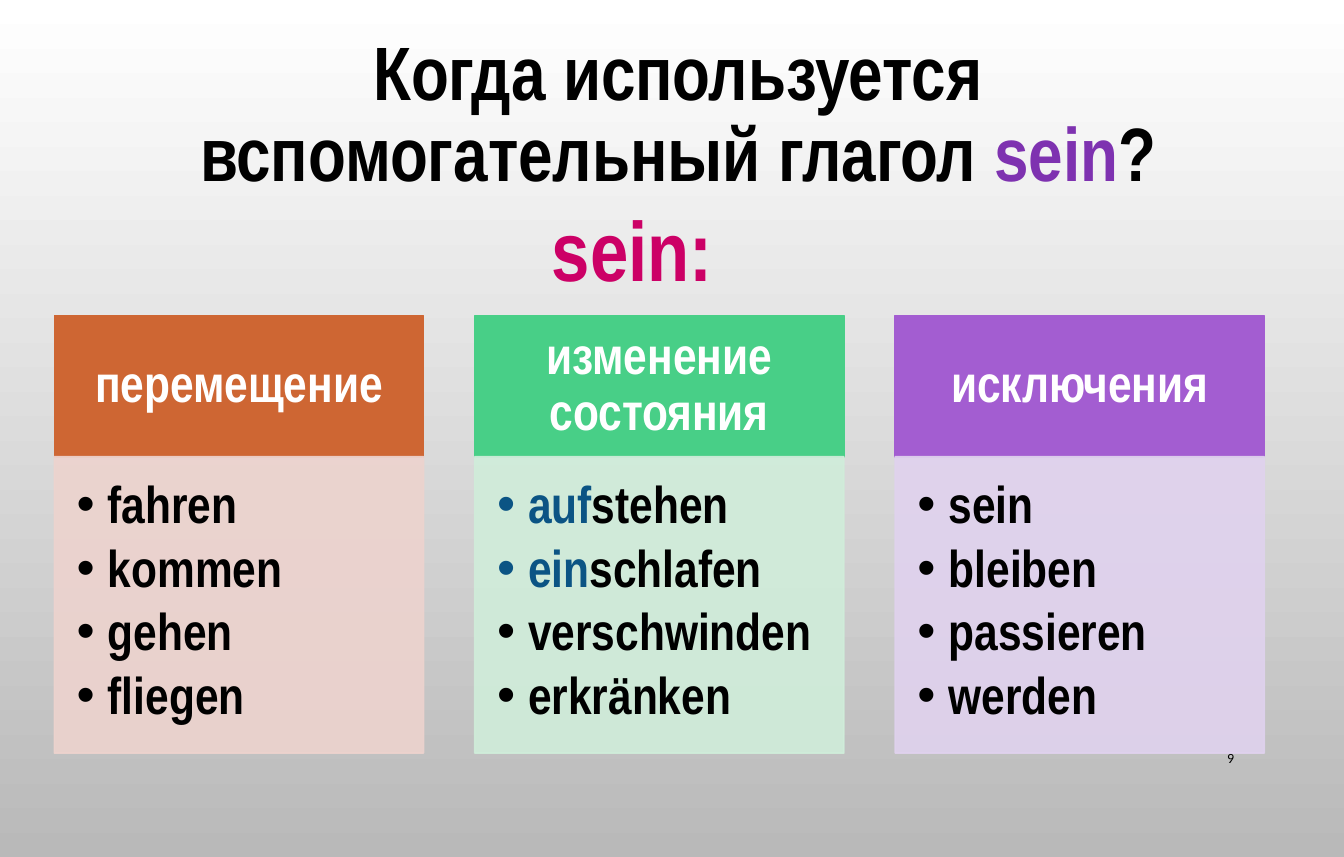
"""Build a slide on German verbs that form the perfect tense with sein."""
from lxml import etree
from pptx import Presentation, util as u
from pptx.dml.color import RGBColor
from pptx.enum import shapes, text
from pptx.oxml.ns import qn


def rgb(value):
    return RGBColor.from_string(value)


def add_run(p, words, size, color="000000", font="Arial Narrow", bold=True):
    r = p.add_run()
    r.text = words
    r.font.size, r.font.name, r.font.bold = u.Pt(size), font, bold
    r.font.color.rgb = rgb(color)


prs = Presentation()
prs.slide_width, prs.slide_height = u.Inches(13.33), u.Inches(8.5)
s = prs.slides.add_slide(prs.slide_layouts[5])

bg = s.background.fill
bg.gradient()
bg.gradient_angle = 270
for stop, color in zip(bg.gradient_stops, ("FFFFFF", "B9B9B9")):
    stop.color.rgb = rgb(color)

title = s.shapes.title
title.left, title.top = u.Inches(1.78), u.Inches(0.56)
title.width, title.height = u.Inches(9.89), u.Inches(1.19)
tf = title.text_frame
tf.word_wrap, tf.auto_size = True, text.MSO_AUTO_SIZE.NONE
tf.vertical_anchor = text.MSO_ANCHOR.MIDDLE
p = tf.paragraphs[0]
p.alignment, p.line_spacing = text.PP_ALIGN.CENTER, 0.9
add_run(p, "Когда используется вспомогательный глагол ", 54)
add_run(p, "sein", 54, "7E32B0")
add_run(p, "?", 54)

sp = s.shapes.add_shape(shapes.MSO_SHAPE.ROUNDED_RECTANGLE, u.Inches(4.5),
                        u.Inches(1.75), u.Inches(3.54), u.Inches(1.42))
sp.shadow.inherit = False
sp.fill.background()
sp.line.fill.background()
p = sp.text_frame.paragraphs[0]
p.alignment = text.PP_ALIGN.CENTER
add_run(p, "sein:", 60, "CC0066")

LEFT, TOP, WIDTH, PITCH = 0.54, 3.13, 3.66, 4.17
HEAD, BODY = 1.4, 2.94
columns = [
    ("перемещение", "CE6633", "EDD3CE",
     [("", "fahren"), ("", "kommen"), ("", "gehen"), ("", "fliegen")]),
    ("изменение состояния", "48CF87", "D0EDDA",
     [("auf", "stehen"), ("ein", "schlafen"), ("", "verschwinden"), ("", "erkränken")]),
    ("исключения", "A35DD1", "E0D2EE",
     [("", "sein"), ("", "bleiben"), ("", "passieren"), ("", "werden")]),
]
for col, (heading, dark, pale, verbs) in enumerate(columns):
    cards = []
    for top, height, color, margins in (
            (TOP, HEAD, dark, (0.29, 0.16, 0.29, 0.16)),
            (TOP + HEAD, BODY, pale, (0.22, 0.22, 0.29, 0.32))):
        sp = s.shapes.add_shape(shapes.MSO_SHAPE.RECTANGLE, u.Inches(LEFT + col * PITCH),
                                u.Inches(top), u.Inches(WIDTH), u.Inches(height))
        sp.shadow.inherit = False
        sp.fill.solid()
        sp.fill.fore_color.rgb = sp.line.color.rgb = rgb(color)
        sp.line.width = u.Pt(1.25)
        tf = sp.text_frame
        tf.word_wrap = True
        tf.margin_left, tf.margin_top, tf.margin_right, tf.margin_bottom = map(u.Inches, margins)
        cards.append(sp)
    head, body = cards

    p = head.text_frame.paragraphs[0]
    p.alignment, p.line_spacing = text.PP_ALIGN.CENTER, 0.9
    add_run(p, heading, 37, "FFFFFF")

    for clr in body._element.spPr.iter(qn("a:srgbClr")):
        etree.SubElement(clr, qn("a:alpha"), val="90000")
    tf = body.text_frame
    tf.vertical_anchor = text.MSO_ANCHOR.TOP
    for row, (prefix, stem) in enumerate(verbs):
        p = tf.add_paragraph() if row else tf.paragraphs[0]
        pPr = p._p.get_or_add_pPr()
        pPr.set("marL", str(u.Inches(0.31)))
        pPr.set("indent", str(-u.Inches(0.31)))
        etree.SubElement(pPr, qn("a:buFont"), typeface="Arial")
        etree.SubElement(pPr, qn("a:buChar"), char="•")
        p.alignment, p.line_spacing, p.space_after = text.PP_ALIGN.LEFT, 0.9, u.Pt(5.5)
        if prefix:
            add_run(p, prefix, 37, "0B5484")
        add_run(p, stem, 37)

tf = s.shapes.add_textbox(u.Inches(11.5), u.Inches(7.29), u.Inches(0.84),
                          u.Inches(0.45)).text_frame
tf.word_wrap = True
tf.vertical_anchor = text.MSO_ANCHOR.MIDDLE
p = tf.paragraphs[0]
p.alignment = text.PP_ALIGN.RIGHT
add_run(p, "9", 10, font="Calibri", bold=False)

prs.save("out.pptx")
